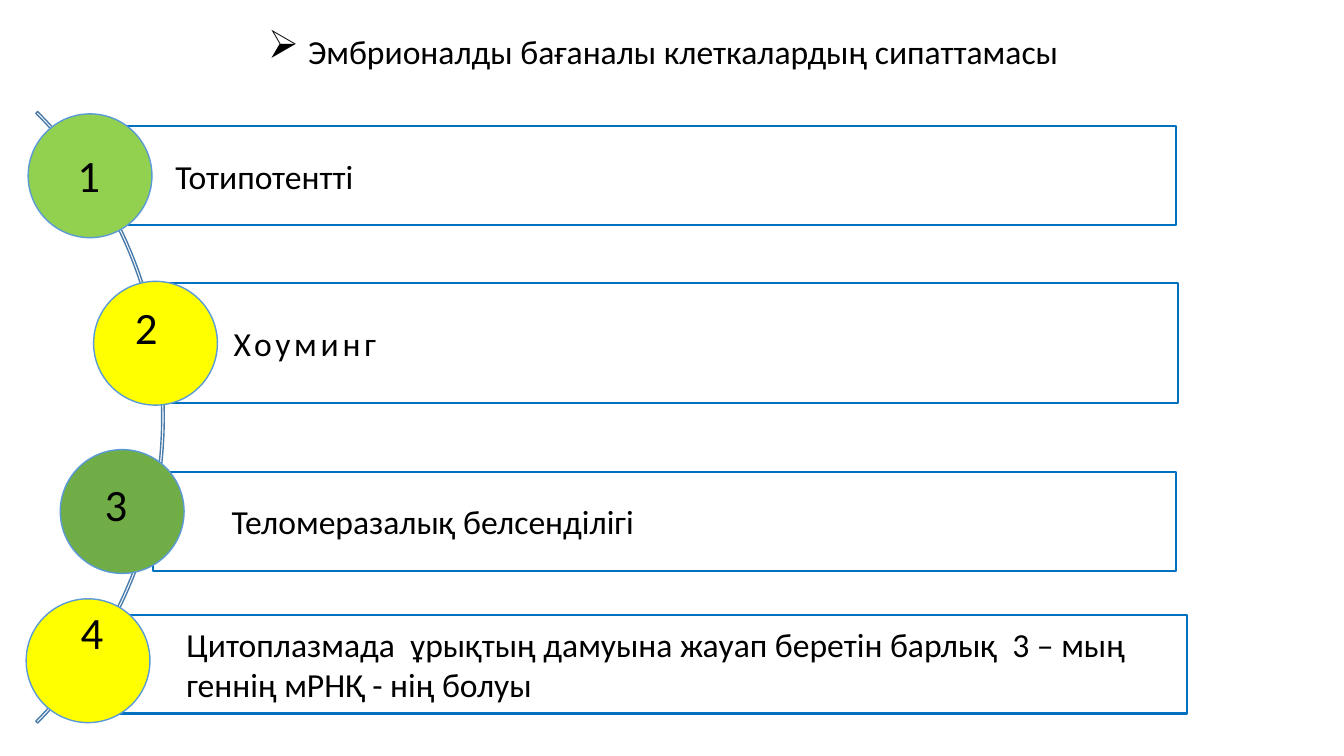
from collections import namedtuple

from lxml.etree import SubElement
from pptx import Presentation
from pptx.dml.color import RGBColor
from pptx.enum.shapes import MSO_SHAPE
from pptx.enum.text import MSO_ANCHOR, PP_ALIGN
from pptx.oxml.ns import qn
from pptx.util import Cm, Pt

BLACK = RGBColor(0x00, 0x00, 0x00)
LIGHT_GREEN = RGBColor(0x92, 0xD0, 0x50)
GREEN = RGBColor(0x70, 0xAD, 0x47)
YELLOW = RGBColor(0xFF, 0xFF, 0x00)
BAR_BLUE = RGBColor(0x00, 0x70, 0xC0)
CIRCLE_BLUE = RGBColor(0x5B, 0x9B, 0xD5)
ARC_BLUE = RGBColor(0x49, 0x7C, 0xAB)

FONT = "Calibri"
CIRCLE_SIZE = 3.12
NUMBER_SIZE = (1.35, 1.63)

# Positions in centimetres: bar is left, top, width, height; the others left, top
Feature = namedtuple("Feature", "text bar circle color number number_fill spacing")
FEATURES = [
    Feature("Тотипотентті", (2.44, 3.18, 27.2, 2.49),
            (0.71, 2.87), LIGHT_GREEN, (1.7, 3.61), None, 0),
    Feature("Хоуминг", (3.91, 7.14, 25.78, 3.02),
            (2.36, 7.09), YELLOW, (3.15, 7.44), None, 2.7),
    Feature("Теломеразалық белсенділігі", (3.86, 11.89, 25.78, 2.49),
            (1.52, 11.33), GREEN, (2.39, 11.89), GREEN, 0),
    Feature("Цитоплазмада  ұрықтың дамуына жауап беретін барлық  3 – мың "
            "геннің мРНҚ - нің болуы", (2.72, 15.49, 27.2, 2.49),
            (0.66, 15.09), YELLOW, (1.78, 15.11), None, 0),
]


def add_run(paragraph, text, size):
    run = paragraph.add_run()
    run.text = text
    run.font.name = FONT
    run.font.size = Pt(size)
    run.font.color.rgb = BLACK
    return run


def add_outline(slide, kind, box, line_color, line_width, fill=None):
    shape = slide.shapes.add_shape(kind, *[Cm(value) for value in box])
    shape.shadow.inherit = False
    if fill is None:
        shape.fill.background()
    else:
        shape.fill.solid()
        shape.fill.fore_color.rgb = fill
    shape.line.color.rgb = line_color
    shape.line.width = Pt(line_width)
    return shape


def add_text_box(slide, box):
    text_box = slide.shapes.add_textbox(*[Cm(value) for value in box])
    text_box.text_frame.word_wrap = True
    return text_box


def add_title(slide, text):
    frame = add_text_box(slide, (0.41, 0.58, 32.61, 1.45)).text_frame
    frame.vertical_anchor = MSO_ANCHOR.MIDDLE
    paragraph = frame.paragraphs[0]
    paragraph.alignment = PP_ALIGN.CENTER
    paragraph.line_spacing = 0.9
    # Arrow bullet with a hanging indent
    properties = paragraph._p.get_or_add_pPr()
    properties.set("marL", str(Cm(0.64)))
    properties.set("indent", str(-Cm(0.64)))
    SubElement(properties, qn("a:buChar")).set("char", "➢")
    add_run(paragraph, " ", 28)
    add_run(paragraph, text, 24)


def add_arc(slide):
    arc = add_outline(slide, MSO_SHAPE.BLOCK_ARC, (-17.65, -0.38, 21.79, 21.79),
                      ARC_BLUE, 1)
    for index, value in enumerate((189, 27, 0.003)):
        arc.adjustments[index] = value


def add_bar(slide, feature):
    bar = add_outline(slide, MSO_SHAPE.RECTANGLE, feature.bar, BAR_BLUE, 1.5)
    frame = bar.text_frame
    frame.word_wrap = True
    frame.vertical_anchor = MSO_ANCHOR.MIDDLE
    frame.margin_left = Cm(1.98)
    frame.margin_top = frame.margin_right = frame.margin_bottom = Cm(0.18)
    paragraph = frame.paragraphs[0]
    paragraph.alignment = PP_ALIGN.LEFT
    run = add_run(paragraph, feature.text, 24)
    if feature.spacing:
        run.font._element.set("spc", str(round(feature.spacing * 100)))


def add_circle(slide, feature):
    add_outline(slide, MSO_SHAPE.OVAL, (*feature.circle, CIRCLE_SIZE, CIRCLE_SIZE),
                CIRCLE_BLUE, 1, feature.color)


def add_number(slide, feature, number):
    text_box = add_text_box(slide, (*feature.number, *NUMBER_SIZE))
    if feature.number_fill is not None:
        text_box.fill.solid()
        text_box.fill.fore_color.rgb = feature.number_fill
    add_run(text_box.text_frame.paragraphs[0], str(number), 32)


def main():
    presentation = Presentation()
    presentation.slide_width = Cm(33.87)
    presentation.slide_height = Cm(19.05)
    slide = presentation.slides.add_slide(presentation.slide_layouts[6])

    add_title(slide, "Эмбрионалды бағаналы клеткалардың сипаттамасы")

    # Arc with the four features along it
    add_arc(slide)
    for feature in FEATURES:
        add_bar(slide, feature)
        add_circle(slide, feature)

    # Numbers over the circles
    for number, feature in enumerate(FEATURES, start=1):
        add_number(slide, feature, number)

    presentation.save("out.pptx")


if __name__ == "__main__":
    main()
